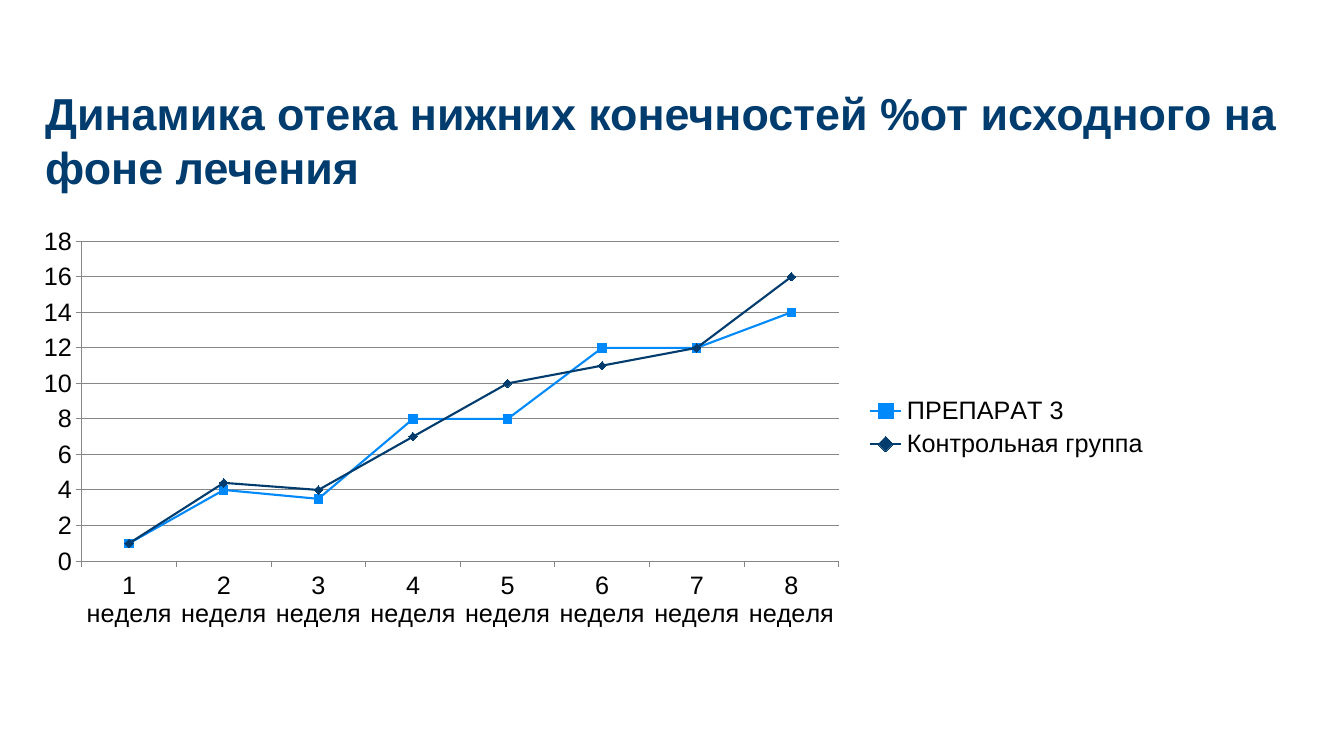
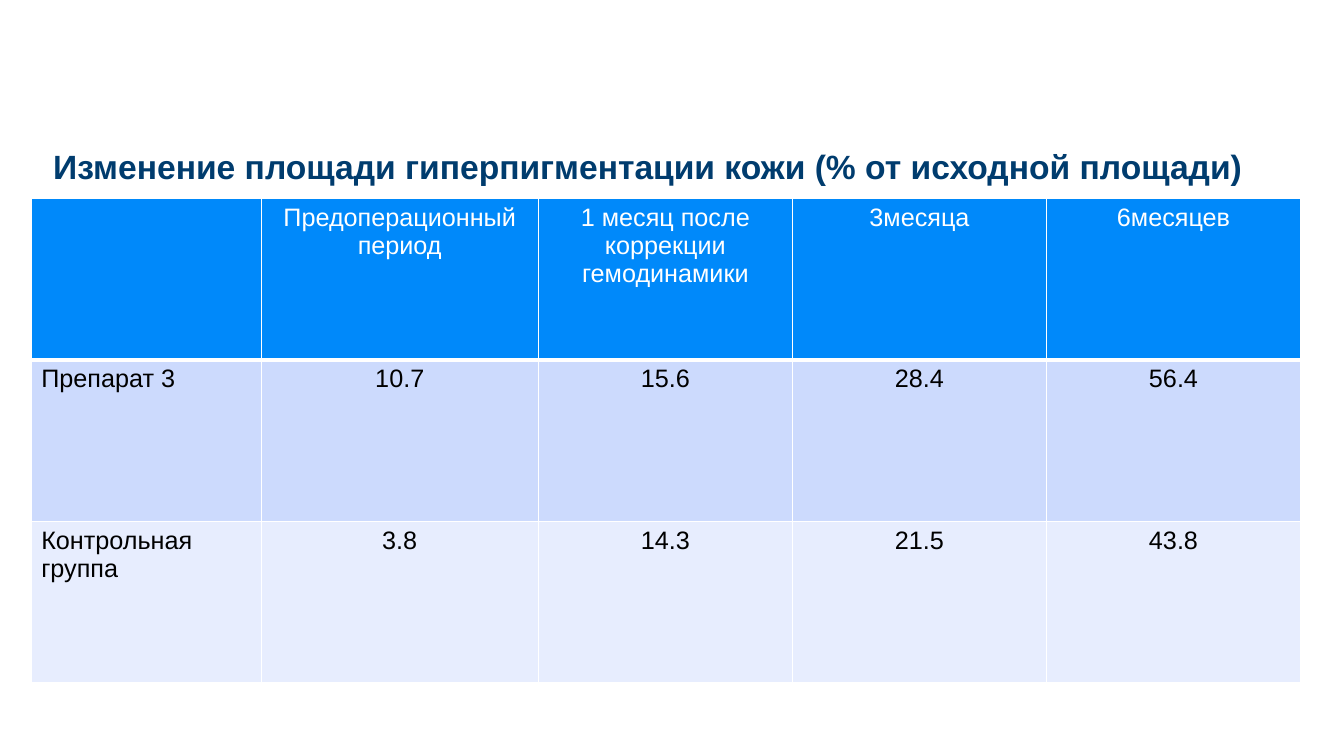
"""Build two slides on treatment results: a line chart and a table."""
from lxml import etree
from pptx import Presentation
from pptx.chart.data import CategoryChartData
from pptx.dml.color import RGBColor
from pptx.enum.chart import XL_CHART_TYPE as Chart, XL_LEGEND_POSITION as Legend
from pptx.enum.chart import XL_MARKER_STYLE as Marker, XL_TICK_MARK as Tick
from pptx.enum.text import MSO_ANCHOR, PP_ALIGN
from pptx.oxml.ns import qn
from pptx.util import Inches, Pt

COLORS = {"navy": "003C6E", "blue": "0089FA", "band": "CCDAFD", "pale": "E7EDFE",
          "white": "FFFFFF", "black": "000000", "grid": "878787"}


class Deck:
    font = "Arial"
    body_size = 18

    def __init__(self):
        self.prs = Presentation()
        self.prs.slide_width, self.prs.slide_height = Inches(13.33), Inches(7.5)
        self.slide = None

    def color(self, name):
        return RGBColor.from_string(COLORS[name])

    def style(self, font, size, color, bold=False):
        font.name, font.size, font.bold = self.font, Pt(size), bold
        font.color.rgb = self.color(color)

    def add_slide(self):
        self.slide = self.prs.slides.add_slide(self.prs.slide_layouts[6])

    def title(self, text, x, y, w, h, size):
        tf = self.slide.shapes.add_textbox(*map(Inches, (x, y, w, h))).text_frame
        tf.word_wrap = True
        tf.vertical_anchor = MSO_ANCHOR.BOTTOM
        tf.text = text
        self.style(tf.paragraphs[0].runs[0].font, size, "navy", True)

    def line_chart(self, cats, series, x, y, w, h):
        data = CategoryChartData()
        data.categories = cats
        for name, values, _, _ in series:
            data.add_series(name, values)
        chart = self.slide.shapes.add_chart(
            Chart.LINE_MARKERS, *map(Inches, (x, y, w, h)), data).chart
        self.style(chart.font, self.body_size, "black")
        chart.has_title = False
        chart.has_legend = True
        chart.legend.position = Legend.RIGHT
        chart.legend.include_in_layout = False
        chart.plots[0].vary_by_categories = False
        lines = [chart.value_axis.major_gridlines.format.line]
        for axis in (chart.category_axis, chart.value_axis):
            axis.major_tick_mark = Tick.OUTSIDE
            lines.append(axis.format.line)
        for line in lines:
            line.color.rgb = self.color("grid")
            line.width = Pt(0.75)
        for ser, (_, _, color, marker) in zip(chart.plots[0].series, series):
            ser.smooth = False
            ser.format.line.color.rgb = self.color(color)
            ser.format.line.width = Pt(1.5)
            ser.marker.style, ser.marker.size = marker, 6
            ser.marker.format.fill.solid()
            ser.marker.format.fill.fore_color.rgb = self.color(color)
            ser.marker.format.line.color.rgb = self.color(color)

    def border(self, cell, side, width):
        tc_pr = cell._tc.get_or_add_tcPr()
        ln = etree.SubElement(tc_pr, qn(f"a:ln{side}"), w=str(Pt(width)))
        fill = etree.SubElement(ln, qn("a:solidFill"))
        etree.SubElement(fill, qn("a:srgbClr"), val=COLORS["white"])

    def cell(self, cell, text, fill, color, align, bottom):
        for side, width in (("L", 1), ("R", 1), ("T", 1), ("B", bottom)):
            self.border(cell, side, width)
        cell.fill.solid()
        cell.fill.fore_color.rgb = self.color(fill)
        cell.text_frame.text = text
        for p in cell.text_frame.paragraphs:
            p.alignment = align
            self.style(p.font, self.body_size, color)
            for r in p.runs:
                self.style(r.font, self.body_size, color)

    def table(self, rows, widths, row_height, x, y):
        table = self.slide.shapes.add_table(
            len(rows), len(widths), Inches(x), Inches(y),
            Inches(sum(widths)), Inches(row_height * len(rows))).table
        table.horz_banding = False
        for col, width in zip(table.columns, widths):
            col.width = Inches(width)
        for i, row in enumerate(rows):
            table.rows[i].height = Inches(row_height)
            fill = "blue" if i == 0 else ("pale", "band")[i % 2]
            for j, text in enumerate(row):
                self.cell(table.cell(i, j), text, fill,
                          "black" if i else "white",
                          PP_ALIGN.CENTER if j else PP_ALIGN.LEFT,
                          1 if i else 3)


def main():
    deck = Deck()

    deck.add_slide()
    deck.title("Динамика отека нижних конечностей %от исходного на фоне лечения",
               0.35, 0.97, 12.64, 1, 32)
    deck.line_chart(
        [f"{week} неделя" for week in range(1, 9)],
        [("ПРЕПАРАТ 3", (1, 4, 3.5, 8, 8, 12, 12, 14), "blue", Marker.SQUARE),
         ("Контрольная группа", (1, 4.4, 4, 7, 10, 11, 12, 16), "navy", Marker.DIAMOND)],
        0.21, 2.17, 11.29, 4.14)

    deck.add_slide()
    deck.title("Изменение площади гиперпигментации кожи (% от исходной площади)",
               0.43, 0.97, 12.56, 0.93, 24)
    deck.table(
        [("", "Предоперационный\nпериод", "1 месяц после коррекции гемодинамики",
          "3месяца", "6месяцев"),
         ("Препарат 3", "10.7", "15.6", "28.4", "56.4"),
         ("Контрольная группа", "3.8", "14.3", "21.5", "43.8")],
        [2.28, 2.75] + [2.52] * 3, 1.6, 0.31, 1.97)

    deck.prs.save("out.pptx")


if __name__ == "__main__":
    main()
